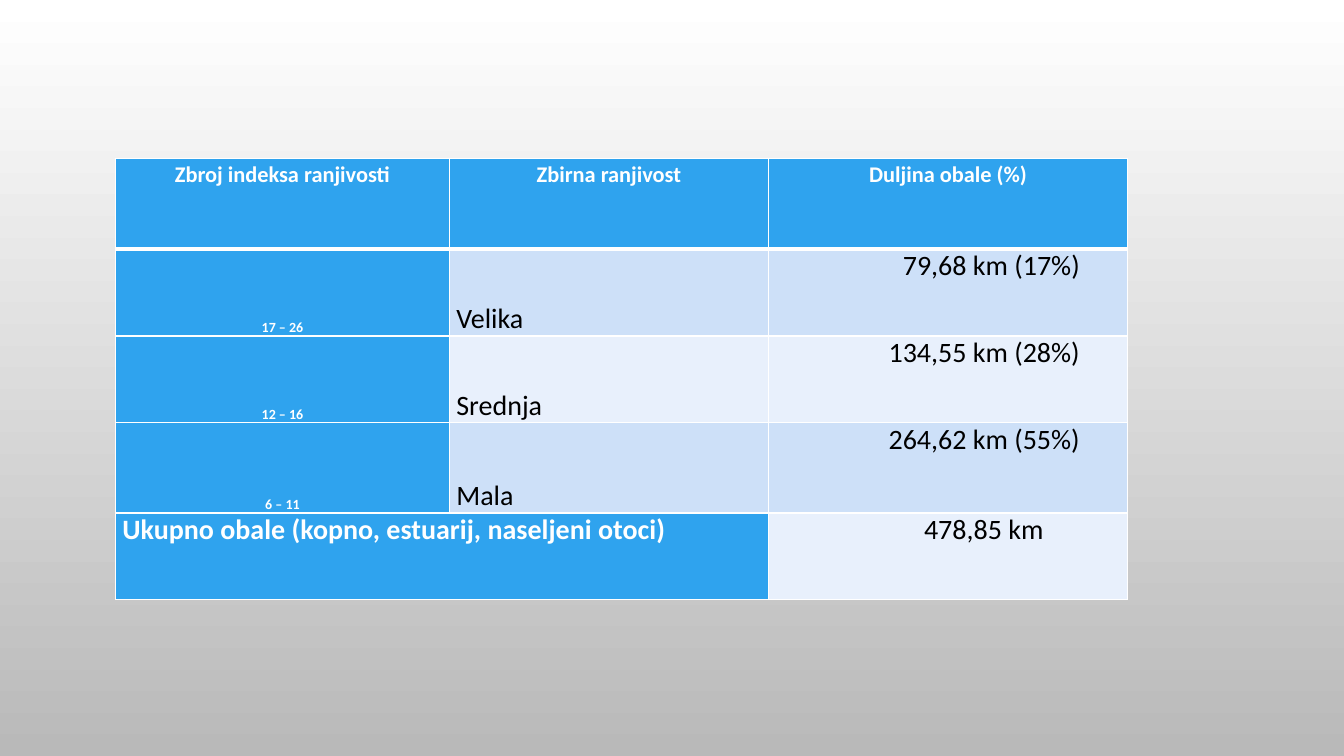
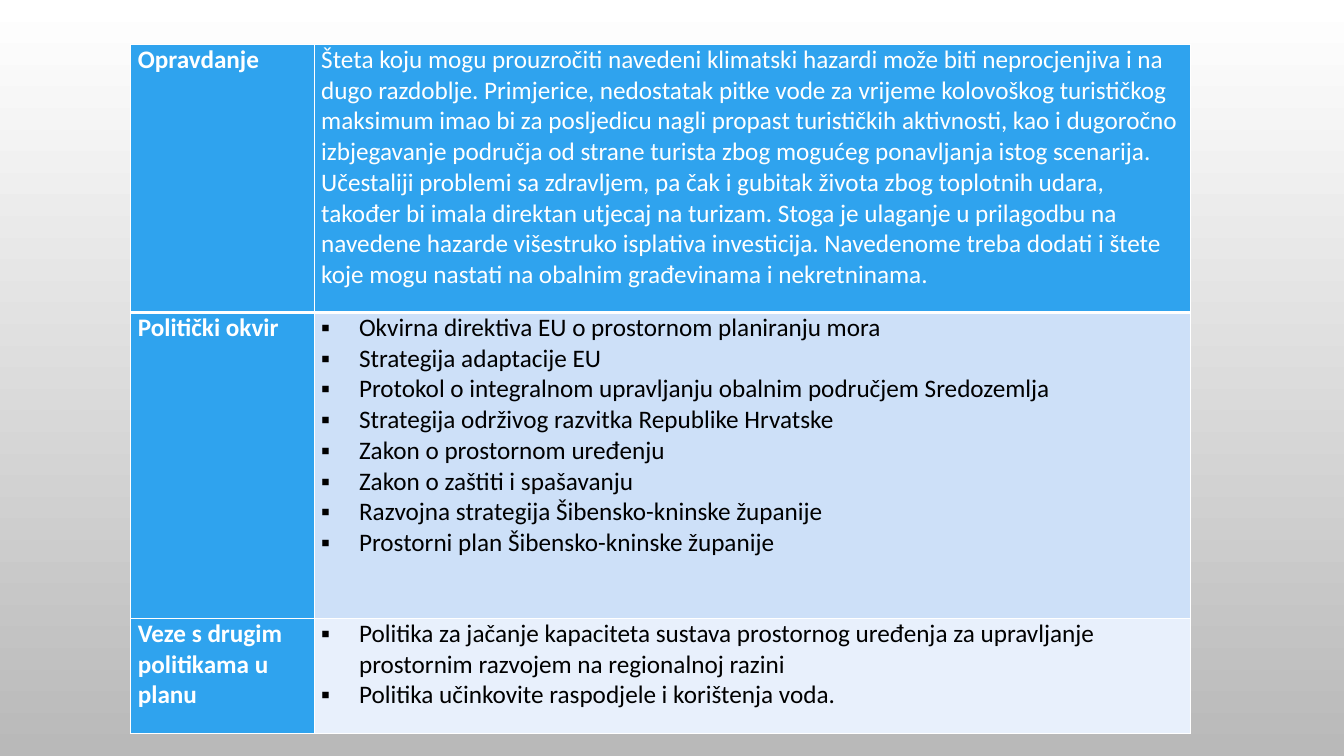
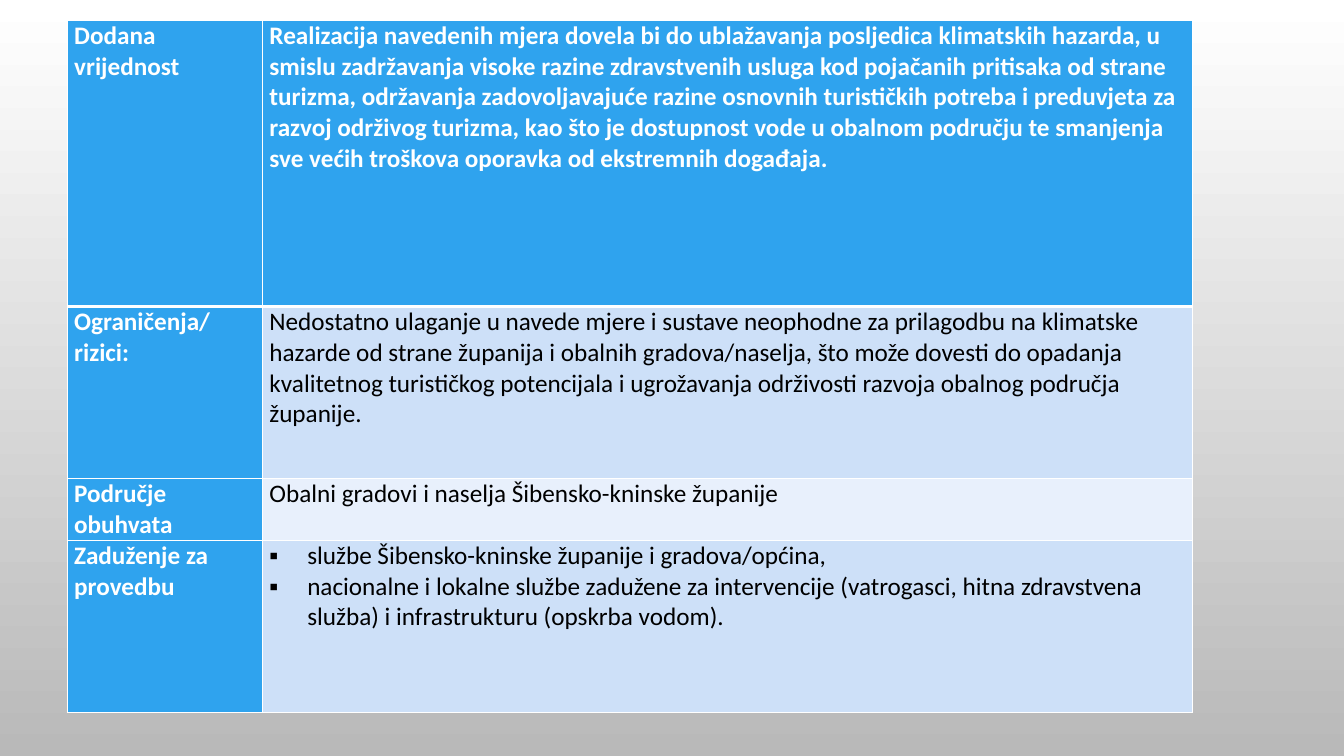
from dataclasses import dataclass, field

from lxml.etree import SubElement
from pptx import Presentation
from pptx.dml.color import RGBColor
from pptx.enum.text import MSO_ANCHOR, PP_ALIGN
from pptx.oxml import parse_xml
from pptx.oxml.ns import nsdecls, qn
from pptx.util import Pt


@dataclass(frozen=True)
class Theme:
    font: str = "Calibri"
    accent: str = "2FA3EE"
    bands: tuple = ("CDE0F8", "E8F0FC")
    on_accent: str = "FFFFFF"
    on_band: str = "000000"
    rule: str = "FFFFFF"
    backdrop: tuple = ("FFFFFF", "B9B9B9")
    tiny: int = 10
    heading: int = 16
    body: int = 18
    figure: int = 20
    inset: int = 5
    bullet: str = "▪"
    bullet_indent: int = 27
    thin: int = 1
    thick: int = 3


THEME = Theme()


@dataclass
class Entry:
    """A table cell's text (a list gives bullets) and its format values."""
    text: object
    cell: dict = field(default_factory=dict)
    paragraph: dict = field(default_factory=dict)
    font: dict = field(default_factory=dict)


def apply(target, values):
    for name, value in values.items():
        setattr(target, name, value)


class Deck:
    def __init__(self, theme):
        self.theme = theme
        self.deck = Presentation()
        apply(self.deck, {"slide_width": Pt(960), "slide_height": Pt(540)})
        self.slide = None
        self.paint_master()

    def paint_master(self):
        backdrop = self.deck.slide_master.background.fill
        backdrop.gradient()
        backdrop.gradient_angle = 270
        for position, (stop, colour) in enumerate(
                zip(backdrop.gradient_stops, self.theme.backdrop)):
            stop.position = position
            stop.color.rgb = RGBColor.from_string(colour)

    def new_slide(self):
        self.slide = self.deck.slides.add_slide(self.deck.slide_layouts[6])

    def table(self, left, top, widths, heights, entries):
        """Add a table; a None entry joins the cell to its left neighbour."""
        frame = self.slide.shapes.add_table(
            len(heights), len(widths), Pt(left), Pt(top),
            Pt(sum(widths)), Pt(sum(heights)))
        table = frame.table
        apply(table, {"first_row": False, "horz_banding": False})
        for column, width in zip(table.columns, widths):
            column.width = Pt(width)
        for row, height in zip(table.rows, heights):
            row.height = Pt(height)
        for r, row_entries in enumerate(entries):
            for c, entry in enumerate(row_entries):
                cell = table.cell(r, c)
                joined = entry is None
                on_accent = r == 0 or c == 0 or joined
                self.paint(cell, r, on_accent)
                if joined:
                    table.cell(r, c - 1).merge(cell)
                else:
                    self.fill_text(cell, entry, on_accent)

    def paint(self, cell, row, on_accent):
        theme = self.theme
        colour = theme.accent if on_accent else theme.bands[(row - 1) % 2]
        cell.fill.solid()
        cell.fill.fore_color.rgb = RGBColor.from_string(colour)
        heavy_edge = {0: "B", 1: "T"}.get(row)
        properties = cell._tc.get_or_add_tcPr()
        for order, edge in enumerate("LRTB"):
            width = theme.thick if edge == heavy_edge else theme.thin
            properties.insert(order, parse_xml(
                f'<a:ln{edge} {nsdecls("a")} w="{Pt(width)}"><a:solidFill>'
                f'<a:srgbClr val="{theme.rule}"/></a:solidFill></a:ln{edge}>'))

    def fill_text(self, cell, entry, on_accent):
        theme = self.theme
        apply(cell, {"margin_left": Pt(theme.inset), "margin_right": Pt(theme.inset),
                     "margin_top": 0, "margin_bottom": 0} | entry.cell)
        bulleted = isinstance(entry.text, list)
        lines = entry.text if bulleted else [entry.text]
        for number, line in enumerate(lines):
            frame = cell.text_frame
            paragraph = frame.add_paragraph() if number else frame.paragraphs[0]
            if bulleted:
                self.add_bullet(paragraph)
            apply(paragraph, entry.paragraph)
            run = paragraph.add_run()
            run.text = line
            apply(run.font, {"name": theme.font, "size": Pt(theme.body),
                             "bold": on_accent} | entry.font)
            run.font.color.rgb = RGBColor.from_string(
                theme.on_accent if on_accent else theme.on_band)

    def add_bullet(self, paragraph):
        properties = paragraph._p.get_or_add_pPr()
        indent = Pt(self.theme.bullet_indent)
        properties.set("marL", str(indent))
        properties.set("indent", str(-indent))
        SubElement(properties, qn("a:buFont"), typeface=self.theme.font)
        SubElement(properties, qn("a:buChar"), char=self.theme.bullet)


def heading(text):
    return Entry(text, paragraph={"alignment": PP_ALIGN.CENTER, "line_spacing": 1.1},
                 font={"size": Pt(THEME.heading)})


def index_range(text):
    return Entry(text, cell={"vertical_anchor": MSO_ANCHOR.BOTTOM},
                 paragraph={"alignment": PP_ALIGN.CENTER},
                 font={"size": Pt(THEME.tiny)})


def level(text):
    return Entry(text, cell={"vertical_anchor": MSO_ANCHOR.BOTTOM},
                 font={"size": Pt(THEME.figure)})


def coast_length(text, inset=34):
    return Entry(text, cell={"margin_right": Pt(inset)},
                 paragraph={"alignment": PP_ALIGN.RIGHT},
                 font={"size": Pt(THEME.figure)})


def vulnerability_slide(deck):
    deck.new_slide()
    levels = [("17 – 26", "Velika", "79,68 km (17%)"),
              ("12 – 16", "Srednja", "134,55 km (28%)"),
              ("6 – 11", "Mala", "264,62 km (55%)")]
    headings = ("Zbroj indeksa ranjivosti", "Zbirna ranjivost", "Duljina obale (%)")
    total = Entry("Ukupno obale (kopno, estuarij, naseljeni otoci)",
                  font={"size": Pt(THEME.figure)})
    deck.table(82.5, 113, [238.5, 228, 256.5], [65, 62, 62, 64.5, 62], [
        [heading(text) for text in headings],
        *[[index_range(score), level(name), coast_length(length)]
          for score, name, length in levels],
        [total, None, coast_length("478,85 km", 60)],
    ])


def policy_slide(deck):
    deck.new_slide()
    deck.table(93.5, 31.7, [131, 626], [191.5, 218.5, 82], [
        [Entry("Opravdanje"), Entry(
            "Šteta koju mogu prouzročiti navedeni klimatski hazardi može biti "
            "neprocjenjiva i na dugo razdoblje. Primjerice, nedostatak pitke vode za "
            "vrijeme kolovoškog turističkog maksimum imao bi za posljedicu nagli propast "
            "turističkih aktivnosti, kao i dugoročno izbjegavanje područja od strane "
            "turista zbog mogućeg ponavljanja istog scenarija. Učestaliji problemi sa "
            "zdravljem, pa čak i gubitak života zbog toplotnih udara, također bi imala "
            "direktan utjecaj na turizam. Stoga je ulaganje u prilagodbu na navedene "
            "hazarde višestruko isplativa investicija. Navedenome treba dodati i štete "
            "koje mogu nastati na obalnim građevinama i nekretninama.",
            font={"bold": False})],
        [Entry("Politički okvir"), Entry([
            "Okvirna direktiva EU o prostornom planiranju mora",
            "Strategija adaptacije EU",
            "Protokol o integralnom upravljanju obalnim područjem Sredozemlja",
            "Strategija održivog razvitka Republike Hrvatske",
            "Zakon o prostornom uređenju",
            "Zakon o zaštiti i spašavanju",
            "Razvojna strategija Šibensko-kninske županije",
            "Prostorni plan Šibensko-kninske županije"])],
        [Entry("Veze s drugim politikama u planu"), Entry([
            "Politika za jačanje kapaciteta sustava prostornog uređenja za upravljanje "
            "prostornim razvojem na regionalnoj razini",
            "Politika učinkovite raspodjele i korištenja voda."])],
    ])


def implementation_slide(deck):
    deck.new_slide()
    deck.table(48, 14.5, [139.5, 664.5], [204.5, 123, 44, 123], [
        [Entry("Dodana vrijednost"), Entry(
            "Realizacija navedenih mjera dovela bi do ublažavanja posljedica klimatskih "
            "hazarda, u smislu zadržavanja visoke razine zdravstvenih usluga kod pojačanih "
            "pritisaka od strane turizma, održavanja zadovoljavajuće razine osnovnih "
            "turističkih potreba i preduvjeta za razvoj održivog turizma, kao što je "
            "dostupnost vode u obalnom području te smanjenja sve većih troškova oporavka "
            "od ekstremnih događaja.")],
        [Entry("Ograničenja/rizici:"), Entry(
            "Nedostatno ulaganje u navede mjere i sustave neophodne za prilagodbu na "
            "klimatske hazarde od strane županija i obalnih gradova/naselja, što može "
            "dovesti do opadanja kvalitetnog turističkog potencijala i ugrožavanja "
            "održivosti razvoja obalnog područja županije.")],
        [Entry("Područje obuhvata"),
         Entry("Obalni gradovi i naselja Šibensko-kninske županije")],
        [Entry("Zaduženje za provedbu"), Entry([
            "službe Šibensko-kninske županije i gradova/općina,",
            "nacionalne i lokalne službe zadužene za intervencije (vatrogasci, hitna "
            "zdravstvena služba) i infrastrukturu (opskrba vodom)."])],
    ])


def main():
    deck = Deck(THEME)
    vulnerability_slide(deck)
    policy_slide(deck)
    implementation_slide(deck)
    deck.deck.save("out.pptx")


if __name__ == "__main__":
    main()
